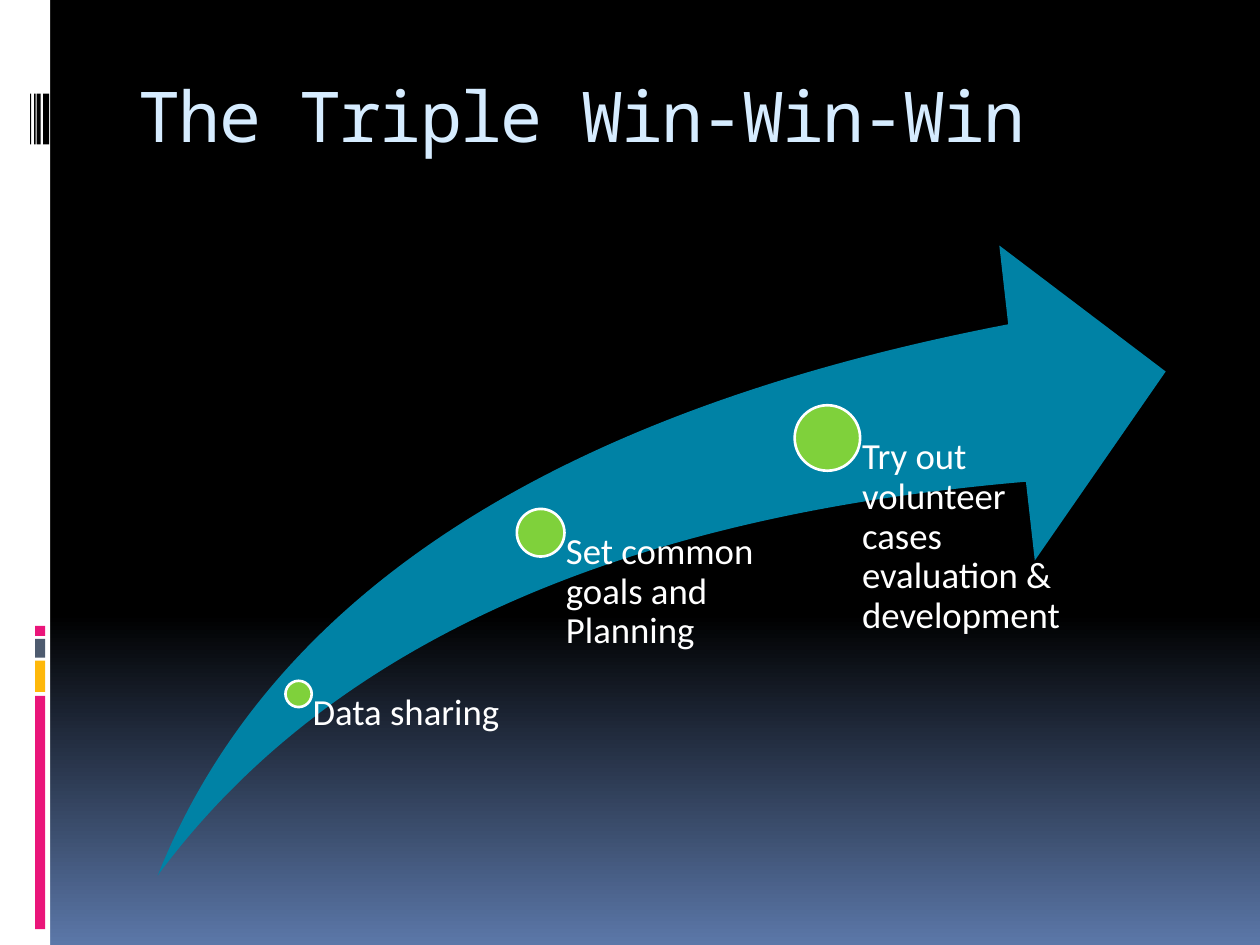
from copy import deepcopy
from dataclasses import dataclass

from pptx import Presentation
from pptx.dml.color import RGBColor
from pptx.enum.shapes import MSO_SHAPE
from pptx.enum.text import MSO_ANCHOR, MSO_AUTO_SIZE, PP_ALIGN
from pptx.oxml.ns import qn
from pptx.util import Cm, Pt


@dataclass(frozen=True)
class Theme:
    """Colours, fonts and type sizes."""
    black: str = "000000"
    white: str = "FFFFFF"
    dusk: str = "5B77A8"
    pink: str = "EA157A"
    amber: str = "FEB80A"
    slate: str = "4E5B6F"
    ice: str = "D6ECFF"
    teal: str = "0082A5"
    green: str = "7FD13B"
    title_font: str = "Noto Sans Mono"
    body_font: str = "Calibri"
    title_size: int = 40
    body_size: int = 21


class SlideBuilder:
    def __init__(self, page, theme):
        self.page = page
        self.theme = theme

    def background(self, stops):
        fill = self.page.background.fill
        fill.gradient()
        fill.gradient_angle = 270
        stop_list = next(self.page.element.iter(qn("a:gsLst")))
        while len(stop_list) < len(stops):
            stop_list.append(deepcopy(stop_list[0]))
        for stop, (position, color) in zip(fill.gradient_stops, stops):
            stop.position = position
            stop.color.rgb = RGBColor.from_string(color)

    def shape(self, kind, left, top, width, height, color, outline=None):
        shape = self.page.shapes.add_shape(
            kind, Cm(left), Cm(top), Cm(width), Cm(height))
        shape.shadow.inherit = False
        shape.fill.solid()
        shape.fill.fore_color.rgb = RGBColor.from_string(color)
        if outline:
            shape.line.color.rgb = RGBColor.from_string(outline)
            shape.line.width = Pt(1.5)
        else:
            shape.line.fill.background()
        return shape

    def add_text(self, frame, text, font, size, color):
        frame.word_wrap = True
        frame.auto_size = MSO_AUTO_SIZE.NONE
        frame.vertical_anchor = MSO_ANCHOR.TOP
        para = frame.paragraphs[0]
        para.alignment = PP_ALIGN.LEFT
        span = para.add_run()
        span.text = text
        span.font.name = font
        span.font.size = Pt(size)
        span.font.color.rgb = RGBColor.from_string(color)
        return para, span

    def title(self, text, left, top, width, height):
        box = self.page.shapes.title
        box.left, box.top = Cm(left), Cm(top)
        box.width, box.height = Cm(width), Cm(height)
        frame = box.text_frame
        frame.margin_top = Cm(0.05)
        theme = self.theme
        _, span = self.add_text(
            frame, text, theme.title_font, theme.title_size, theme.ice)
        span.font._element.set("spc", "-100")  # one point tighter

    def label(self, text, left, top, width, height, indent):
        box = self.page.shapes.add_textbox(
            Cm(left), Cm(top), Cm(width), Cm(height))
        frame = box.text_frame
        frame.margin_left = Cm(indent)
        frame.margin_top = frame.margin_right = frame.margin_bottom = 0
        theme = self.theme
        para, _ = self.add_text(
            frame, text, theme.body_font, theme.body_size, theme.white)
        para.line_spacing = 0.9

    def milestone(self, text, center_x, center_y, diameter, width, bottom):
        """A dot on the arrow, with its label hanging from the dot's centre."""
        radius = diameter / 2
        self.shape(MSO_SHAPE.OVAL, center_x - radius, center_y - radius,
                   diameter, diameter, self.theme.green, self.theme.white)
        self.label(text, center_x, center_y, width, bottom - center_y,
                   0.53 * diameter)


def main():
    theme = Theme()
    deck = Presentation()
    deck.slide_width, deck.slide_height = Cm(25.4), Cm(19.05)
    builder = SlideBuilder(deck.slides.add_slide(deck.slide_layouts[5]), theme)
    builder.background([(0, theme.black), (0.65, theme.black), (1, theme.dusk)])

    # Side band with coloured blocks
    builder.shape(MSO_SHAPE.RECTANGLE, 0, 0, 1.01, 19.05, theme.white)
    for top, height, color in [(14.03, 4.7, theme.pink),
                               (13.32, 0.63, theme.amber),
                               (12.88, 0.38, theme.slate),
                               (12.62, 0.2, theme.pink)]:
        builder.shape(MSO_SHAPE.RECTANGLE, 0.71, top, 0.2, height, color)

    # Barcode strips
    for left, width in [(0.87, 0.12), (0.74, 0.08), (0.69, 0.03), (0.61, 0.02)]:
        builder.shape(MSO_SHAPE.RECTANGLE, left, 1.89, width, 1.02, theme.black)

    builder.title("The Triple Win-Win-Win", 2.54, 1.42, 21.59, 2.54)

    # Rising arrow and its milestones
    arrow_top, arrow_height = 4.95, 12.7
    arrow = builder.shape(MSO_SHAPE.SWOOSH_ARROW, 3.18, arrow_top,
                          20.32, arrow_height, theme.teal)
    arrow.adjustments[0] = arrow.adjustments[1] = 0.25
    for text, center_x, center_y, diameter, width in [
            ("Data sharing", 6.02, 13.99, 0.53, 4.72),
            ("Set common goals and Planning", 10.9, 10.74, 0.96, 4.88),
            ("Try out volunteer cases evaluation & development",
             16.68, 8.83, 1.32, 4.88)]:
        builder.milestone(text, center_x, center_y, diameter, width,
                          arrow_top + arrow_height)

    deck.save("out.pptx")


if __name__ == "__main__":
    main()
